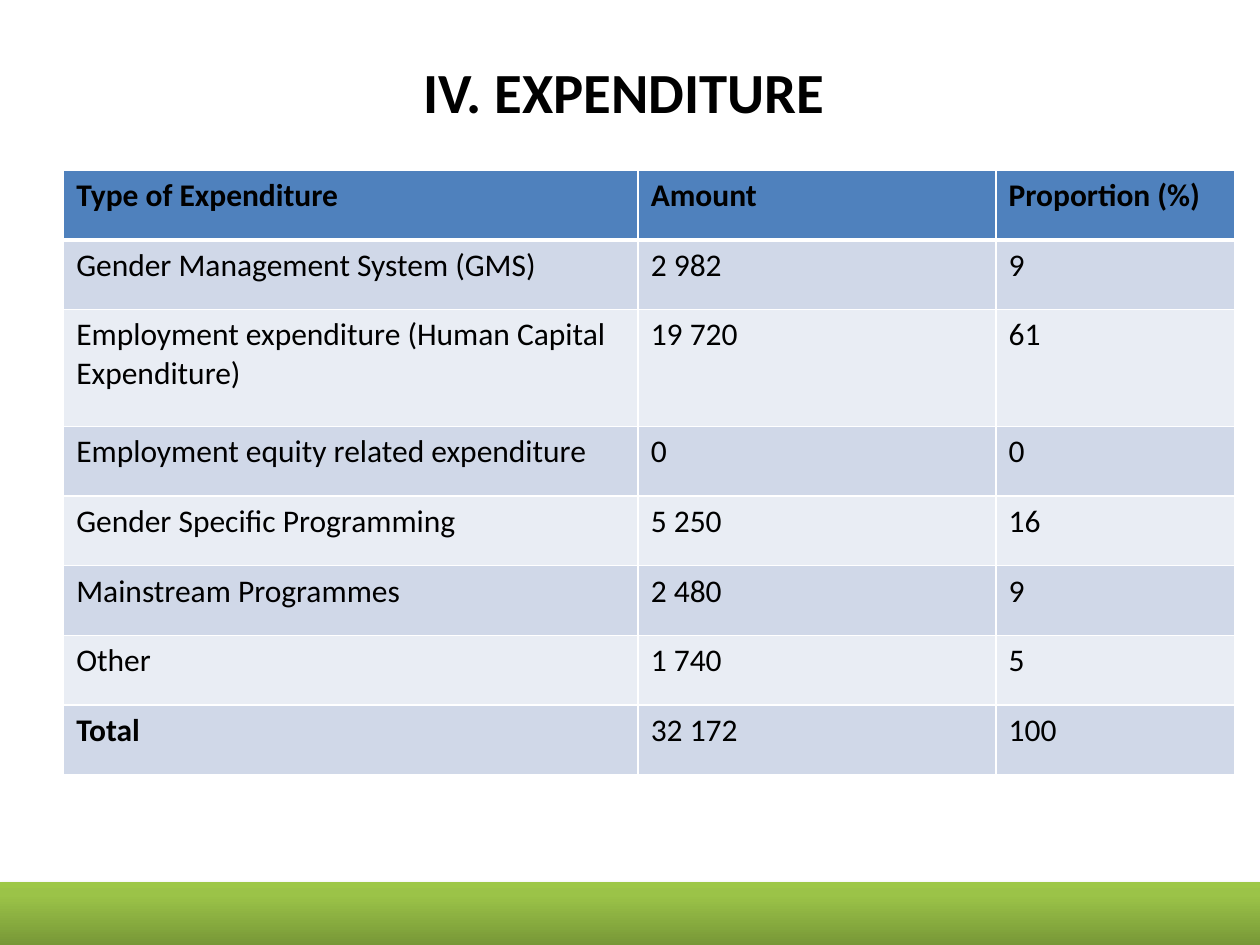
import copy
from dataclasses import dataclass

import pptx
import pptx.dml.color
import pptx.enum.dml
import pptx.enum.shapes
import pptx.enum.text
import pptx.oxml
import pptx.oxml.ns
import pptx.oxml.xmlchemy
import pptx.util

Pt = pptx.util.Pt
qn = pptx.oxml.ns.qn


@dataclass(frozen=True)
class Theme:
    font: str = "Calibri"
    title_size: float = 32.4
    table_size: float = 18
    text: str = "000000"
    border: str = "FFFFFF"
    header: str = "4F81BD"
    bands: tuple = ("D0D8E8", "E9EDF4")
    footer: tuple = ((0, "779737"), (0.8, "9BC348"), (1, "9DC746"))


THEME = Theme()

ROWS = [
    ("Type of Expenditure", "Amount", "Proportion (%)"),
    ("Gender Management System (GMS)", "2 982", "9"),
    ("Employment expenditure (Human Capital Expenditure)", "19 720", "61"),
    ("Employment equity related expenditure", "0", "0"),
    ("Gender Specific Programming", "5 250", "16"),
    ("Mainstream Programmes", "2 480", "9"),
    ("Other", "1 740", "5"),
    ("Total", "32 172", "100"),
]
COLUMN_WIDTHS = (328.3, 204.5, 136.4)
ROW_HEIGHT, TALL_ROW_HEIGHT, TALL_ROW = 39.75, 66.9, 2


def rgb(value):
    return pptx.dml.color.RGBColor.from_string(value)


def assign(target, values):
    for name, value in values.items():
        setattr(target, name, value)


def write_text(frame, text, size, bold):
    para = frame.paragraphs[0]
    span = para.add_run()
    span.text = text
    assign(span.font, {"name": THEME.font, "size": Pt(size), "bold": bold})
    span.font.color.rgb = rgb(THEME.text)
    return para


def add_title(page, text):
    box = page.shapes.title
    assign(box, {"left": Pt(36), "top": Pt(21.6), "width": Pt(648), "height": Pt(90)})
    # The deep bottom inset lifts the heading above the middle of its box
    assign(box.text_frame, {
        "word_wrap": True,
        "auto_size": pptx.enum.text.MSO_AUTO_SIZE.NONE,
        "vertical_anchor": pptx.enum.text.MSO_ANCHOR.MIDDLE,
        "margin_right": Pt(14),
        "margin_bottom": Pt(36),
    })
    para = write_text(box.text_frame, text, THEME.title_size, True)
    assign(para, {"alignment": pptx.enum.text.PP_ALIGN.CENTER, "line_spacing": 1.07})


def set_borders(cell, widths):
    properties = cell._tc.get_or_add_tcPr()
    for position, (side, width) in enumerate(widths.items()):
        line = pptx.oxml.parse_xml(
            f'<a:ln{side} {pptx.oxml.ns.nsdecls("a")} w="{Pt(width)}">'
            f'<a:solidFill><a:srgbClr val="{THEME.border}"/></a:solidFill>'
            f'</a:ln{side}>'
        )
        properties.insert(position, line)


def format_cell(cell, text, row, column):
    is_header = row == 0
    cell.fill.solid()
    cell.fill.fore_color.rgb = rgb(THEME.header if is_header else THEME.bands[(row - 1) % 2])
    is_total_label = row == len(ROWS) - 1 and column == 0
    write_text(cell.text_frame, text, THEME.table_size, is_header or is_total_label)
    set_borders(cell, {
        "L": 1,
        "R": 1,
        "T": 3 if row == 1 else 1,
        "B": 3 if is_header else 1,
    })


def add_expenditure_table(page):
    heights = [TALL_ROW_HEIGHT if row == TALL_ROW else ROW_HEIGHT for row in range(len(ROWS))]
    frame = page.shapes.add_table(
        len(ROWS), len(COLUMN_WIDTHS),
        Pt(36.4), Pt(97.4), Pt(sum(COLUMN_WIDTHS)), Pt(sum(heights)),
    )
    table = frame.table
    for column, width in zip(table.columns, COLUMN_WIDTHS):
        column.width = Pt(width)
    for row, (texts, height) in enumerate(zip(ROWS, heights)):
        table.rows[row].height = Pt(height)
        for column, text in enumerate(texts):
            format_cell(table.cell(row, column), text, row, column)


def add_footer_band(page):
    band = page.shapes.add_shape(
        pptx.enum.shapes.MSO_SHAPE.RECTANGLE, Pt(0), Pt(504), Pt(735), Pt(36.5)
    )
    band.line.fill.background()
    band.fill.gradient()
    band.fill.gradient_angle = 90
    # The default gradient has two stops; the third is a copy of the last
    stops = band._element.spPr.find(".//" + qn("a:gsLst"))
    stops.append(copy.deepcopy(stops[-1]))
    for stop, (position, color) in zip(band.fill.gradient_stops, THEME.footer):
        stop.position = position
        stop.color.rgb = rgb(color)
    # Soft shadow straight down
    band.shadow.inherit = False
    band._element.spPr.find(qn("a:effectLst")).append(pptx.oxml.parse_xml(
        f'<a:outerShdw {pptx.oxml.ns.nsdecls("a")} blurRad="{Pt(3.1)}" dist="{Pt(1.8)}" '
        'dir="5400000" rotWithShape="0"><a:srgbClr val="000000">'
        '<a:alpha val="35000"/></a:srgbClr></a:outerShdw>'
    ))


def main():
    deck = pptx.Presentation()
    assign(deck, {"slide_width": Pt(720), "slide_height": Pt(540)})
    page = deck.slides.add_slide(deck.slide_layouts[5])
    add_footer_band(page)
    add_title(page, "IV. EXPENDITURE")
    add_expenditure_table(page)
    deck.save("out.pptx")


if __name__ == "__main__":
    main()
